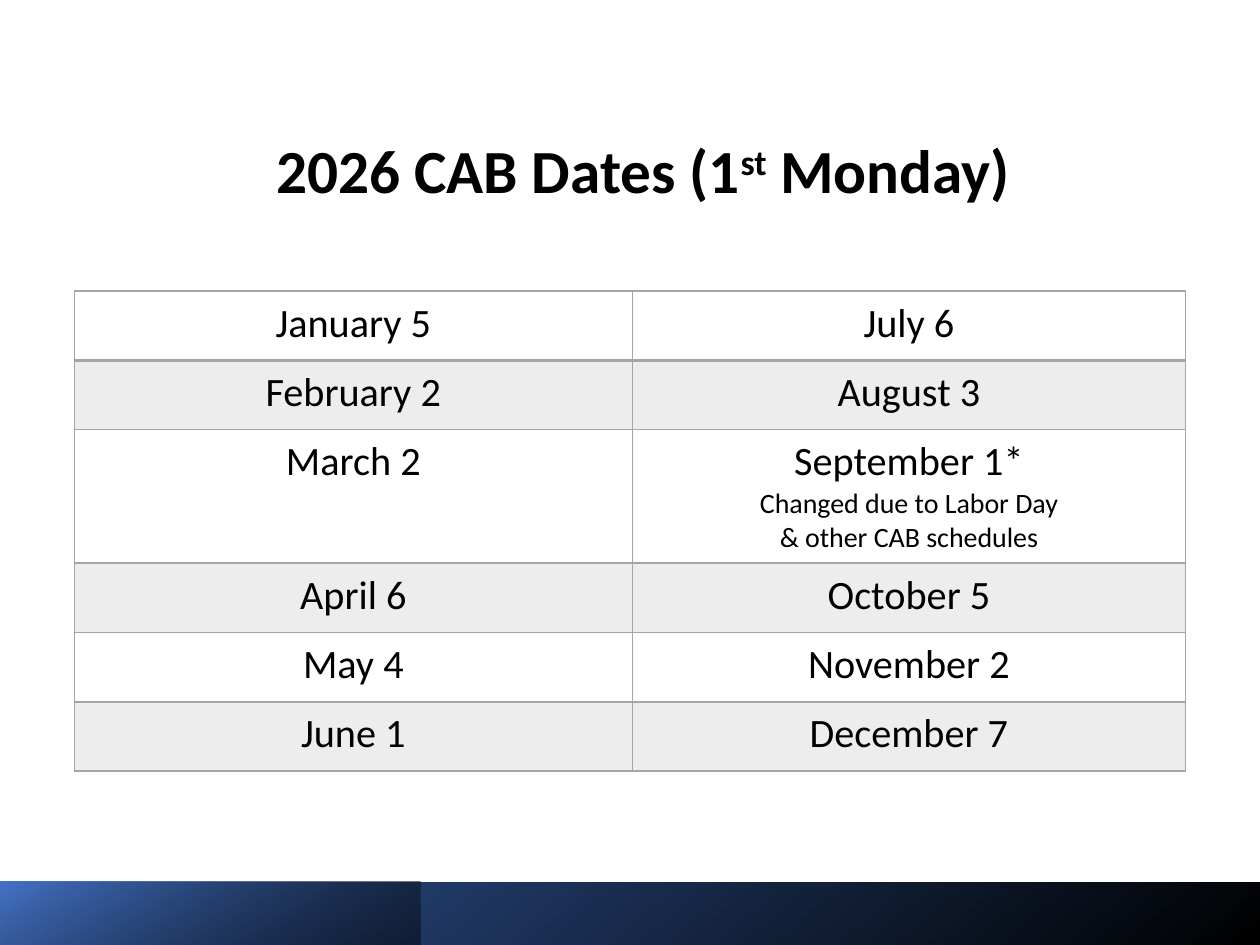
import pptx
import pptx.dml.color
import pptx.enum.shapes
import pptx.enum.text
import pptx.oxml
import pptx.oxml.ns
import pptx.util

ALIGN = pptx.enum.text.PP_ALIGN
ANCHOR = pptx.enum.text.MSO_ANCHOR
FIRST_HALF = ["January 5", "February 2", "March 2", "April 6", "May 4", "June 1"]
SECOND_HALF = [
    "July 6",
    "August 3",
    "September 1*\nChanged due to Labor Day\n& other CAB schedules",
    "October 5",
    "November 2",
    "December 7",
]


def colour(value):
    return pptx.dml.color.RGBColor.from_string(value)


def apply(target, values):
    for name, value in values.items():
        setattr(target, name, value)


def set_opacity(fill_parent, percent):
    tag = pptx.oxml.ns.qn("a:srgbClr")
    element = next(fill_parent.iter(tag))
    alpha = element.makeelement(pptx.oxml.ns.qn("a:alpha"), {"val": str(percent * 1000)})
    element.append(alpha)


class SlideBuilder:
    font = "Calibri"
    ink = "000000"
    grey = "A5A5A5"
    title_size = 35
    date_size = 23
    note_size = 16
    columns, rows = 100, 75

    def __init__(self, deck):
        self.deck = deck
        self.page = deck.slides.add_slide(deck.slide_layouts[5])

    def across(self, count):
        return round(self.deck.slide_width * count / self.columns)

    def down(self, count):
        return round(self.deck.slide_height * count / self.rows)

    def place(self, left, top, width, height):
        return {
            "left": self.across(left),
            "top": self.down(top),
            "width": self.across(width),
            "height": self.down(height),
        }

    def add_span(self, para, text, size, bold=False):
        span = para.add_run()
        span.text = text
        apply(span.font, {"name": self.font, "size": pptx.util.Pt(size), "bold": bold})
        span.font.color.rgb = colour(self.ink)
        return span

    def title(self, parts, area):
        box = self.page.shapes.title
        apply(box, self.place(*area))
        apply(box.text_frame, {
            "word_wrap": True,
            "auto_size": pptx.enum.text.MSO_AUTO_SIZE.NONE,
            "vertical_anchor": ANCHOR.MIDDLE,
        })
        para = box.text_frame.paragraphs[0]
        apply(para, {"alignment": ALIGN.CENTER, "line_spacing": 0.9})
        for text, baseline in parts:
            span = self.add_span(para, text, self.title_size, bold=True)
            span._r.get_or_add_rPr().set("baseline", str(baseline * 1000))

    def gradient_bar(self, area, stops, angle, start_opacity=None):
        bar = self.page.shapes.add_shape(
            pptx.enum.shapes.MSO_SHAPE.RECTANGLE, **self.place(*area))
        bar.shadow.inherit = False
        bar.line.fill.background()
        bar.fill.gradient()
        bar.fill.gradient_angle = 360 - angle
        for stop, (position, value) in zip(bar.fill.gradient_stops, stops):
            stop.position = position
            stop.color.rgb = colour(value)
        if start_opacity:
            set_opacity(bar._element.spPr, start_opacity)

    def cell_borders(self, cell, widths):
        for side, width in widths.items():
            cell._tc.get_or_add_tcPr().append(pptx.oxml.parse_xml(
                f'<a:ln{side} {pptx.oxml.ns.nsdecls("a")} w="{pptx.util.Pt(width)}">'
                f'<a:solidFill><a:srgbClr val="{self.grey}"/></a:solidFill></a:ln{side}>'))

    def date_cell(self, cell, text, row):
        apply(cell, {
            "margin_left": self.across(1.3),
            "margin_right": self.across(1.3),
            "margin_top": self.down(0.6),
            "margin_bottom": self.down(0.6),
            "vertical_anchor": ANCHOR.TOP,
        })
        self.cell_borders(cell, {
            "L": 1, "R": 1, "T": 2 if row == 1 else 1, "B": 2 if row == 0 else 1})
        if row % 2:
            cell.fill.solid()
            cell.fill.fore_color.rgb = colour(self.grey)
            set_opacity(cell._tc.tcPr.find(pptx.oxml.ns.qn("a:solidFill")), 20)
        else:
            cell.fill.background()
        frame = cell.text_frame
        for index, line in enumerate(text.split("\n")):
            para = frame.add_paragraph() if index else frame.paragraphs[0]
            para.alignment = ALIGN.CENTER
            self.add_span(para, line, self.note_size if index else self.date_size)

    def date_table(self, lists, left, top, widths, heights):
        area = self.place(left, top, sum(widths), sum(heights))
        table = self.page.shapes.add_table(len(heights), len(widths), **area).table
        apply(table, {"first_row": False, "horz_banding": False})
        for column, width in zip(table.columns, widths):
            column.width = self.across(width)
        for row, height in zip(table.rows, heights):
            row.height = self.down(height)
        for column, dates in enumerate(lists):
            for row, text in enumerate(dates):
                self.date_cell(table.cell(row, column), text, row)


def main():
    deck = pptx.Presentation()
    deck.slide_width = pptx.util.Inches(10)
    deck.slide_height = pptx.util.Inches(7.5)
    builder = SlideBuilder(deck)
    builder.title(
        [("2026 CAB Dates (1", 0), ("st", 30), (" Monday)", 0)], (9.3, 7.8, 83.5, 12))
    builder.gradient_bar((0, 70, 100, 5.1), [(0, "000000"), (1, "2F5597")], 230)
    builder.gradient_bar(
        (0, 70, 33.4, 5.1), [(0, "000000"), (0.99, "4472C4")], 240, start_opacity=46)
    row_heights = [10.6 if "\n" in text else 5.5 for text in SECOND_HALF]
    builder.date_table([FIRST_HALF, SECOND_HALF], 5.9, 23.1, [44.3, 43.9], row_heights)
    deck.save("out.pptx")


if __name__ == "__main__":
    main()
